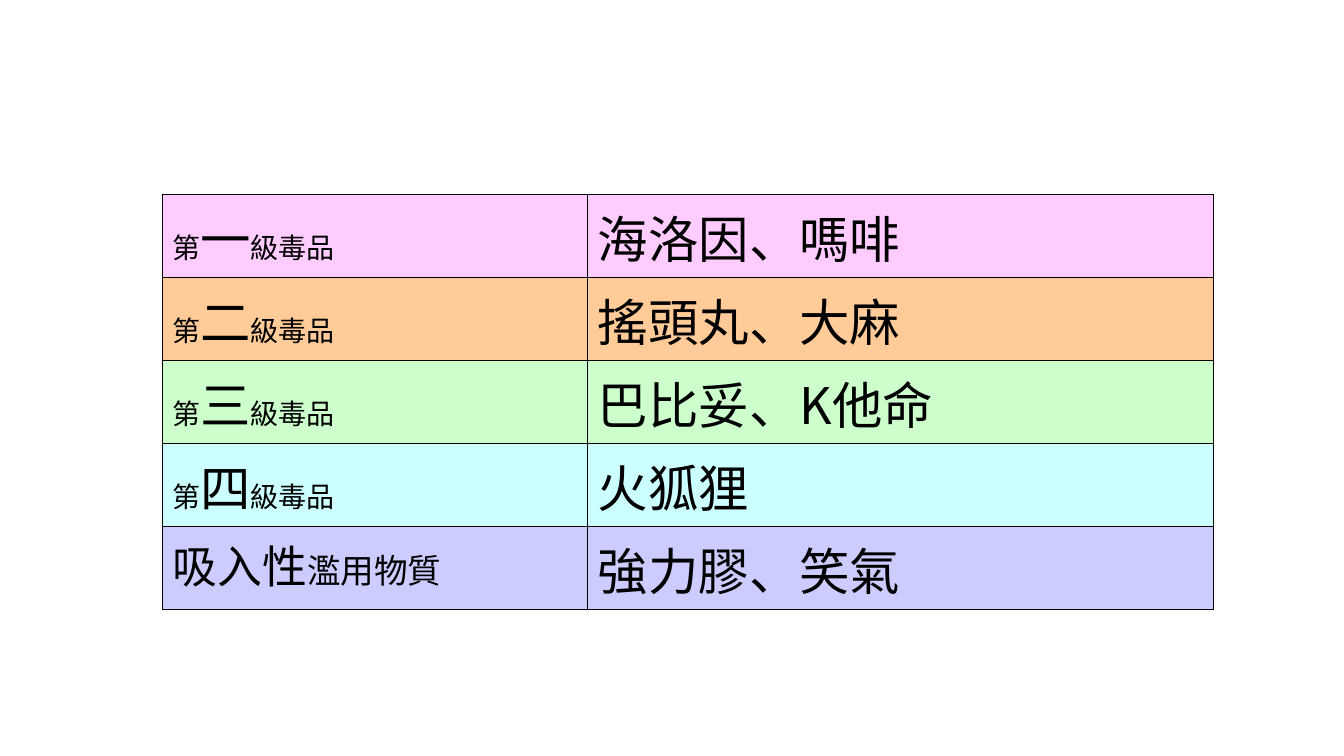
from lxml import etree
from pptx import Presentation
from pptx.dml.color import RGBColor
from pptx.oxml.ns import qn
from pptx.util import Inches, Pt

FONT = "Noto Sans CJK SC"
BLACK = "000000"

# fill, runs of the class name, examples; each run is (text, size in points)
ROWS = [
    ("FFCCFF", [("第", 20), ("一", 36), ("級毒品", 20)], "海洛因、嗎啡"),
    ("FFCC99", [("第", 20), ("二", 36), ("級毒品", 20)], "搖頭丸、大麻"),
    ("CCFFCC", [("第", 20), ("三", 36), ("級毒品", 20)], "巴比妥、K他命"),
    ("CCFFFF", [("第", 20), ("四", 36), ("級毒品", 20)], "火狐狸"),
    ("CCCCFF", [("吸入性", 32), ("濫用物質", 24)], "強力膠、笑氣"),
]
EXAMPLE_SIZE = 36
LEFT, TOP = 1.61, 1.93
COL_WIDTHS = [4.22, 6.21]
ROW_HEIGHT = 0.82


def rgb(color):
    return RGBColor.from_string(color)


def add_borders(cell):
    """Draw a thin black line on all four sides; must precede the cell fill."""
    tc_pr = cell._tc.get_or_add_tcPr()
    for side in ("a:lnL", "a:lnR", "a:lnT", "a:lnB"):
        ln = etree.SubElement(tc_pr, qn(side), w=str(Pt(1)))
        fill = etree.SubElement(ln, qn("a:solidFill"))
        etree.SubElement(fill, qn("a:srgbClr"), val=BLACK)


def fill_cell(cell, color, runs):
    add_borders(cell)
    cell.fill.solid()
    cell.fill.fore_color.rgb = rgb(color)
    p = cell.text_frame.paragraphs[0]
    for text, size in runs:
        r = p.add_run()
        r.text = text
        r.font.size = Pt(size)
        r.font.name = FONT
        r.font.color.rgb = rgb(BLACK)
        etree.SubElement(r._r.get_or_add_rPr(), qn("a:ea"), typeface=FONT)


def main():
    prs = Presentation()
    prs.slide_width, prs.slide_height = Inches(13.33), Inches(7.5)
    slide = prs.slides.add_slide(prs.slide_layouts[6])

    table = slide.shapes.add_table(
        len(ROWS), len(COL_WIDTHS), Inches(LEFT), Inches(TOP),
        Inches(sum(COL_WIDTHS)), Inches(ROW_HEIGHT * len(ROWS))).table
    table.first_row = table.horz_banding = False
    for column, width in zip(table.columns, COL_WIDTHS):
        column.width = Inches(width)

    for i, (color, name_runs, examples) in enumerate(ROWS):
        table.rows[i].height = Inches(ROW_HEIGHT)
        fill_cell(table.cell(i, 0), color, name_runs)
        fill_cell(table.cell(i, 1), color, [(examples, EXAMPLE_SIZE)])

    prs.save("out.pptx")


if __name__ == "__main__":
    main()
